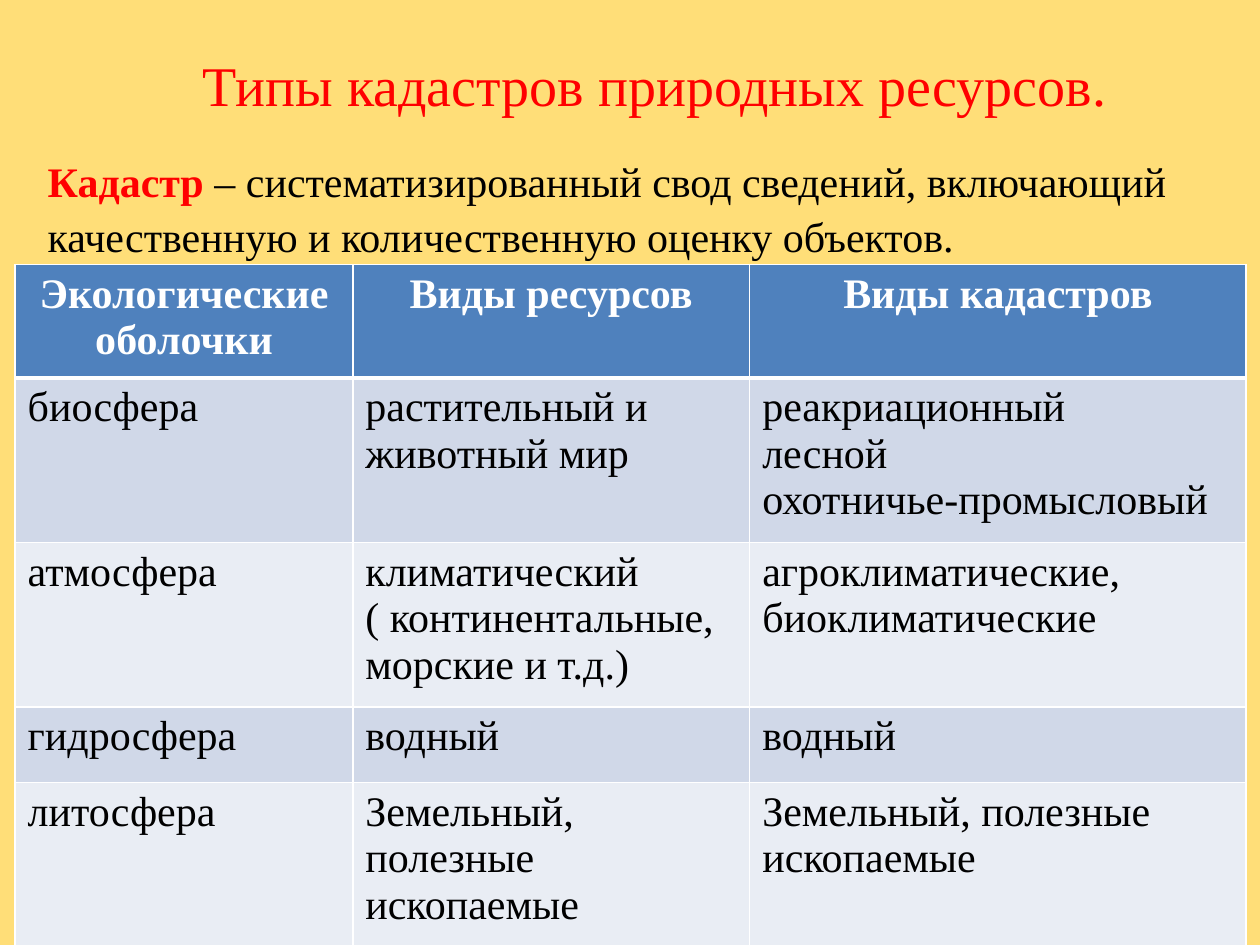
import dataclasses

import pptx
import pptx.dml.color
import pptx.enum.text
import pptx.oxml
import pptx.oxml.ns
import pptx.util

WIDTH, HEIGHT = pptx.util.Inches(10), pptx.util.Inches(7.5)
FONT = "Times New Roman"
COLORS = {
    "background": "FFDE78",
    "accent": "FF0000",
    "body": "000000",
    "header": "4F81BD",
    "header_text": "FFFFFF",
    "border": "FFFFFF",
    "odd": "D0D8E8",
    "even": "E9EDF4",
}
CENTER = pptx.enum.text.PP_ALIGN.CENTER
LEFT = pptx.enum.text.PP_ALIGN.LEFT


@dataclasses.dataclass(frozen=True)
class Area:
    left: float
    top: float
    width: float
    height: float

    def lengths(self) -> tuple[int, int, int, int]:
        return (int(self.left * WIDTH), int(self.top * HEIGHT),
                int(self.width * WIDTH), int(self.height * HEIGHT))


@dataclasses.dataclass(frozen=True)
class Run:
    text: str
    color: str
    bold: bool = False


@dataclasses.dataclass(frozen=True)
class Statement:
    area: Area
    runs: tuple[Run, ...]
    size: int
    align: pptx.enum.text.PP_ALIGN


@dataclasses.dataclass(frozen=True)
class Row:
    height: float
    cells: tuple[str, str, str]


STATEMENTS = (
    Statement(Area(0.075, 0.04, 0.89, 0.085),
              (Run("Типы кадастров природных ресурсов.", "accent"),), 32, CENTER),
    Statement(Area(0.028, 0.153, 0.961, 0.175),
              (Run("Кадастр", "accent", True),
               Run(" – систематизированный свод сведений, включающий "
                   "качественную и количественную оценку объектов.", "body")), 24, LEFT),
)
TABLE_AREA = Area(0.012, 0.28, 0.977, 0.72)
COLUMN_SHARES = (0.268, 0.315, 0.394)
ROWS = (
    Row(0.12, ("Экологические оболочки", "Виды ресурсов", "Виды кадастров")),
    Row(0.174, ("биосфера", "растительный и животный мир",
                "реакриационный\nлесной\nохотничье-промысловый")),
    Row(0.174, ("атмосфера", "климатический\n( континентальные, морские и т.д.)",
                "агроклиматические, биоклиматические")),
    Row(0.08, ("гидросфера", "водный", "водный")),
    Row(0.174, ("литосфера", "Земельный, полезные ископаемые",
                "Земельный, полезные ископаемые")),
)


def rgb(name: str) -> pptx.dml.color.RGBColor:
    return pptx.dml.color.RGBColor.from_string(COLORS[name])


def draw_statement(slide, statement: Statement) -> None:
    frame = slide.shapes.add_textbox(*statement.area.lengths()).text_frame
    frame.word_wrap = True
    paragraph = frame.paragraphs[0]
    paragraph.alignment = statement.align
    paragraph.line_spacing = 1.09
    paragraph.font.name = FONT
    paragraph.font.size = pptx.util.Pt(statement.size)
    for part in statement.runs:
        run = paragraph.add_run()
        run.text = part.text
        run.font.bold = part.bold
        run.font.color.rgb = rgb(part.color)


def set_borders(cell, widths: dict[str, float]) -> None:
    properties = cell._tc.get_or_add_tcPr()
    for position, (side, points) in enumerate(widths.items()):
        properties.insert(position, pptx.oxml.parse_xml(
            f'<a:{side} {pptx.oxml.ns.nsdecls("a")} w="{pptx.util.Pt(points)}">'
            f'<a:solidFill><a:srgbClr val="{COLORS["border"]}"/></a:solidFill>'
            f'</a:{side}>'))


def draw_cell(cell, text: str, row_index: int) -> None:
    is_header = row_index == 0
    cell.fill.solid()
    cell.fill.fore_color.rgb = rgb(
        "header" if is_header else "odd" if row_index % 2 else "even")
    set_borders(cell, {"lnL": 1, "lnR": 1, "lnT": 3 if row_index == 1 else 1,
                       "lnB": 3 if is_header else 1})
    cell.text = text
    for paragraph in cell.text_frame.paragraphs:
        paragraph.alignment = CENTER if is_header else LEFT
        paragraph.font.name = FONT
        paragraph.font.size = pptx.util.Pt(24)
        paragraph.font.bold = is_header
        paragraph.font.color.rgb = rgb("header_text" if is_header else "body")


def draw_cadastres(slide) -> None:
    table = slide.shapes.add_table(
        len(ROWS), len(COLUMN_SHARES), *TABLE_AREA.lengths()).table
    for column, share in zip(table.columns, COLUMN_SHARES):
        column.width = int(share * WIDTH)
    for row_index, row in enumerate(ROWS):
        table.rows[row_index].height = int(row.height * HEIGHT)
        for column_index, text in enumerate(row.cells):
            draw_cell(table.cell(row_index, column_index), text, row_index)


def main() -> None:
    presentation = pptx.Presentation()
    presentation.slide_width, presentation.slide_height = WIDTH, HEIGHT
    slide = presentation.slides.add_slide(presentation.slide_layouts[6])
    slide.background.fill.solid()
    slide.background.fill.fore_color.rgb = rgb("background")
    for statement in STATEMENTS:
        draw_statement(slide, statement)
    draw_cadastres(slide)
    presentation.save("out.pptx")


if __name__ == "__main__":
    main()
